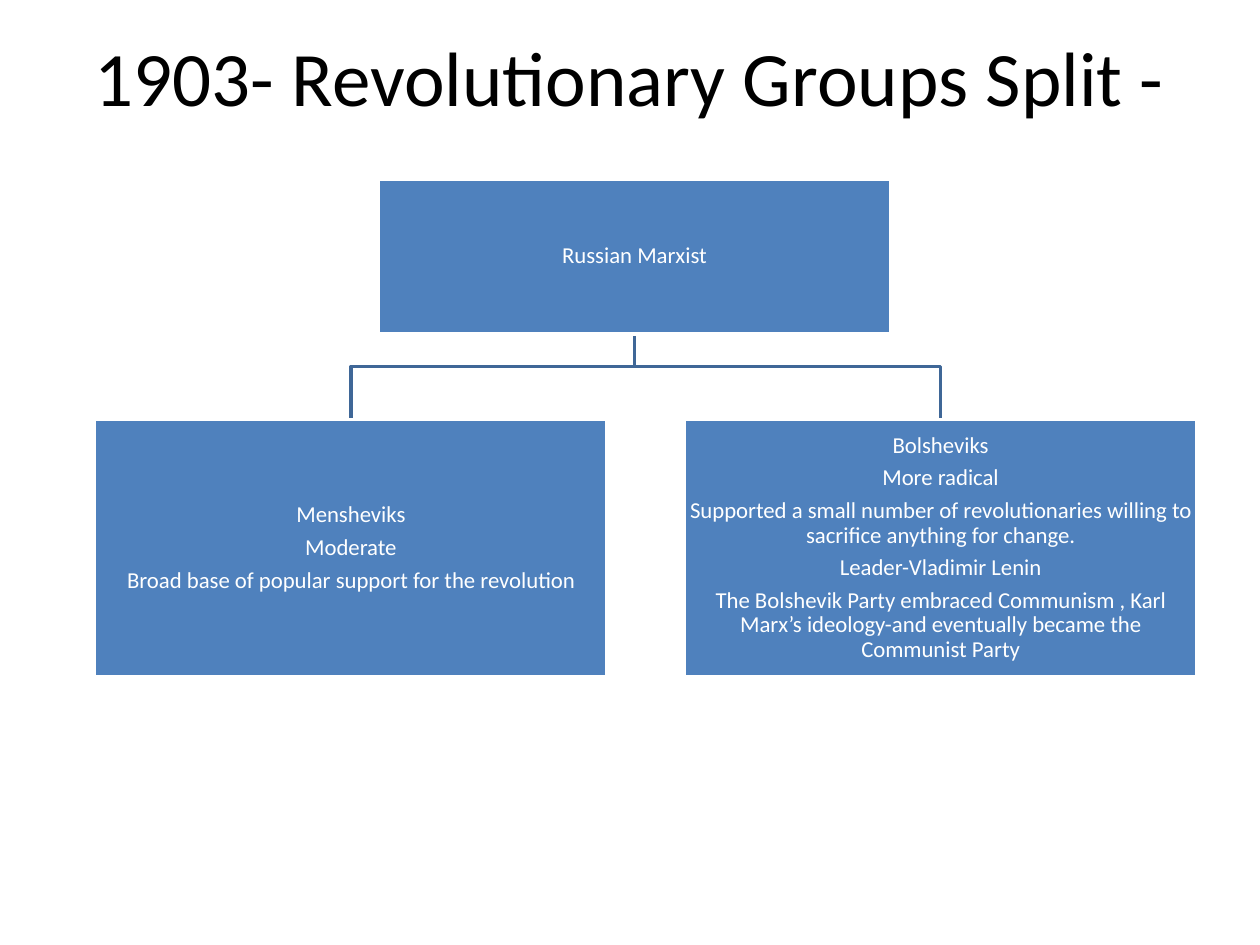
from dataclasses import dataclass

from pptx import Presentation
from pptx.dml.color import RGBColor
from pptx.enum.shapes import MSO_SHAPE
from pptx.enum.text import MSO_ANCHOR, PP_ALIGN
from pptx.util import Inches, Pt


@dataclass(frozen=True)
class Theme:
    font: str = "Calibri"
    title_size: float = 44
    box_size: float = 13
    line_width: float = 2
    title_color: RGBColor = RGBColor(0x00, 0x00, 0x00)
    box_fill: RGBColor = RGBColor(0x4F, 0x81, 0xBD)
    box_text: RGBColor = RGBColor(0xFF, 0xFF, 0xFF)
    box_border: RGBColor = RGBColor(0xFF, 0xFF, 0xFF)
    branch: RGBColor = RGBColor(0x3F, 0x67, 0x97)


class SlideBuilder:
    def __init__(self, slide, theme):
        self.slide = slide
        self.theme = theme

    def add_run(self, paragraph, text, size, color):
        paragraph.alignment = PP_ALIGN.CENTER
        run = paragraph.add_run()
        run.text = text
        run.font.name = self.theme.font
        run.font.size = Pt(size)
        run.font.color.rgb = color

    def title(self, text, left, top, width, height):
        shape = self.slide.shapes.title
        shape.left, shape.top = Inches(left), Inches(top)
        shape.width, shape.height = Inches(width), Inches(height)
        shape.text_frame.vertical_anchor = MSO_ANCHOR.MIDDLE
        self.add_run(shape.text_frame.paragraphs[0], text,
                     self.theme.title_size, self.theme.title_color)

    def box(self, lines, left, top, width, height):
        shape = self.slide.shapes.add_shape(
            MSO_SHAPE.RECTANGLE, Inches(left), Inches(top), Inches(width), Inches(height))
        shape.shadow.inherit = False
        shape.fill.solid()
        shape.fill.fore_color.rgb = self.theme.box_fill
        shape.line.color.rgb = self.theme.box_border
        shape.line.width = Pt(self.theme.line_width)

        frame = shape.text_frame
        frame.word_wrap = True
        frame.vertical_anchor = MSO_ANCHOR.MIDDLE
        frame.margin_left = frame.margin_right = Inches(0.01)
        frame.margin_top = frame.margin_bottom = Inches(0.01)
        for index, line in enumerate(lines):
            paragraph = frame.add_paragraph() if index else frame.paragraphs[0]
            paragraph.line_spacing = 0.9
            paragraph.space_after = Pt(self.theme.box_size * 0.35)
            self.add_run(paragraph, line, self.theme.box_size, self.theme.box_text)

    def branch(self, points):
        start, *rest = [(Inches(x), Inches(y)) for x, y in points]
        builder = self.slide.shapes.build_freeform(*start)
        builder.add_line_segments(rest, close=False)
        shape = builder.convert_to_shape()
        shape.shadow.inherit = False
        shape.fill.background()
        shape.line.color.rgb = self.theme.branch
        shape.line.width = Pt(self.theme.line_width)


def main():
    presentation = Presentation()
    presentation.slide_width, presentation.slide_height = Inches(10), Inches(7.5)
    slide = presentation.slides.add_slide(presentation.slide_layouts[5])
    builder = SlideBuilder(slide, Theme())

    builder.title("1903- Revolutionary Groups Split -", 0.5, 0.25, 9, 0.7)

    # Tree layout: one parent centred above two children
    box_width = 4.07
    parent_left, parent_top, parent_height = 3, 1.42, 1.23
    child_top, child_height = 3.33, 2.04
    bend_y = 2.91
    parent_center = parent_left + box_width / 2
    parent_bottom = parent_top + parent_height
    groups = [
        (0.75, ["Mensheviks", "Moderate",
                "Broad base of popular support for the revolution"]),
        (5.43, ["Bolsheviks", "More radical",
                "Supported a small number of revolutionaries willing to "
                "sacrifice anything for change.",
                "Leader-Vladimir Lenin",
                "The Bolshevik Party embraced Communism , Karl Marx’s "
                "ideology-and eventually became the Communist Party"]),
    ]

    # Branches lie behind the boxes
    for left, _ in reversed(groups):
        child_center = left + box_width / 2
        builder.branch([(parent_center, parent_bottom), (parent_center, bend_y),
                        (child_center, bend_y), (child_center, child_top)])

    # Boxes
    builder.box(["Russian Marxist"], parent_left, parent_top, box_width, parent_height)
    for left, lines in groups:
        builder.box(lines, left, child_top, box_width, child_height)

    presentation.save("out.pptx")


if __name__ == "__main__":
    main()
